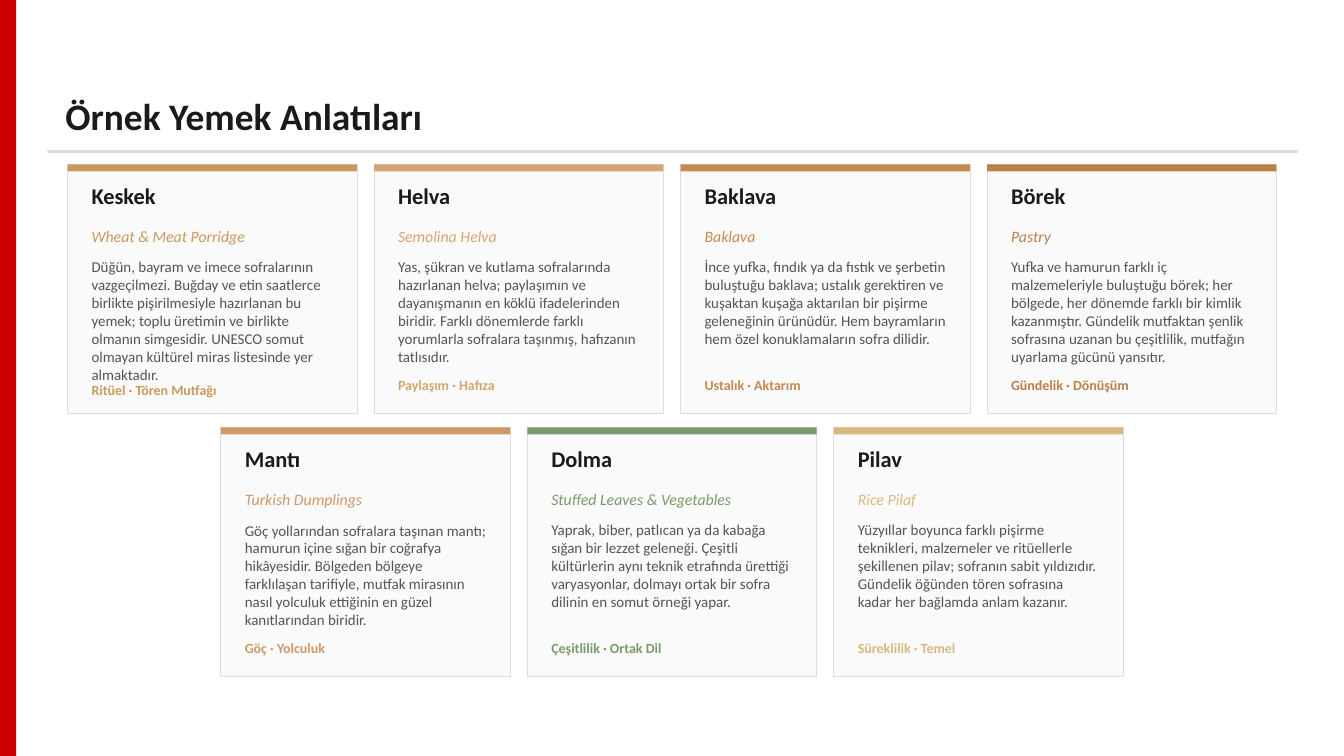
import pptx
import pptx.util
import pptx.dml.color
import pptx.enum.shapes
import pptx.enum.text

Inches = pptx.util.Inches
RGBColor = pptx.dml.color.RGBColor

RED = RGBColor(0xCC, 0x00, 0x00)
INK = RGBColor(0x1A, 0x1A, 0x1A)
GREY = RGBColor(0x55, 0x55, 0x55)
RULE = RGBColor(0xDD, 0xDD, 0xDD)
PAPER = RGBColor(0xFA, 0xFA, 0xFA)
WHEAT = RGBColor(0xC8, 0x9A, 0x60)
SEMOLINA = RGBColor(0xD4, 0xA5, 0x74)
SYRUP = RGBColor(0xC4, 0x8A, 0x50)
CRUST = RGBColor(0xBA, 0x80, 0x48)
DOUGH = RGBColor(0xD0, 0x98, 0x68)
LEAF = RGBColor(0x7A, 0x9A, 0x6A)
RICE = RGBColor(0xD8, 0xB8, 0x80)

WIDTH, HEIGHT = 13.33, 7.5
CARD_WIDTH, CARD_HEIGHT = 2.87, 2.47
COLUMN_STEP, ROW_STEP = 3.04, 2.61
GRID_LEFT, GRID_TOP = 0.67, 1.63
LINE_HEIGHT = 0.18

DISHES = [
    (0, 0, WHEAT, 7, "Keskek", "Wheat & Meat Porridge",
     "Düğün, bayram ve imece sofralarının vazgeçilmezi. Buğday ve etin saatlerce "
     "birlikte pişirilmesiyle hazırlanan bu yemek; toplu üretimin ve birlikte olmanın "
     "simgesidir. UNESCO somut olmayan kültürel miras listesinde yer almaktadır.",
     "Ritüel · Tören Mutfağı"),
    (1, 0, SEMOLINA, 6, "Helva", "Semolina Helva",
     "Yas, şükran ve kutlama sofralarında hazırlanan helva; paylaşımın ve dayanışmanın "
     "en köklü ifadelerinden biridir. Farklı dönemlerde farklı yorumlarla sofralara "
     "taşınmış, hafızanın tatlısıdır.",
     "Paylaşım · Hafıza"),
    (2, 0, SYRUP, 6, "Baklava", "Baklava",
     "İnce yufka, fındık ya da fıstık ve şerbetin buluştuğu baklava; ustalık gerektiren "
     "ve kuşaktan kuşağa aktarılan bir pişirme geleneğinin ürünüdür. Hem bayramların "
     "hem özel konuklamaların sofra dilidir.",
     "Ustalık · Aktarım"),
    (3, 0, CRUST, 6, "Börek", "Pastry",
     "Yufka ve hamurun farklı iç malzemeleriyle buluştuğu börek; her bölgede, her dönemde "
     "farklı bir kimlik kazanmıştır. Gündelik mutfaktan şenlik sofrasına uzanan bu "
     "çeşitlilik, mutfağın uyarlama gücünü yansıtır.",
     "Gündelik · Dönüşüm"),
    (0.5, 1, DOUGH, 6, "Mantı", "Turkish Dumplings",
     "Göç yollarından sofralara taşınan mantı; hamurun içine sığan bir coğrafya "
     "hikâyesidir. Bölgeden bölgeye farklılaşan tarifiyle, mutfak mirasının nasıl "
     "yolculuk ettiğinin en güzel kanıtlarından biridir.",
     "Göç · Yolculuk"),
    (1.5, 1, LEAF, 5, "Dolma", "Stuffed Leaves & Vegetables",
     "Yaprak, biber, patlıcan ya da kabağa sığan bir lezzet geleneği. Çeşitli kültürlerin "
     "aynı teknik etrafında ürettiği varyasyonlar, dolmayı ortak bir sofra dilinin en "
     "somut örneği yapar.",
     "Çeşitlilik · Ortak Dil"),
    (2.5, 1, RICE, 5, "Pilav", "Rice Pilaf",
     "Yüzyıllar boyunca farklı pişirme teknikleri, malzemeler ve ritüellerle şekillenen "
     "pilav; sofranın sabit yıldızıdır. Gündelik öğünden tören sofrasına kadar her "
     "bağlamda anlam kazanır.",
     "Süreklilik · Temel"),
]

deck = pptx.Presentation()
deck.slide_width = Inches(WIDTH)
deck.slide_height = Inches(HEIGHT)
page = deck.slides.add_slide(deck.slide_layouts[6])


def add_bar(left, top, width, height, fill, outline=None):
    bar = page.shapes.add_shape(pptx.enum.shapes.MSO_SHAPE.RECTANGLE,
                                Inches(left), Inches(top), Inches(width), Inches(height))
    bar.shadow.inherit = False
    bar.fill.solid()
    bar.fill.fore_color.rgb = fill
    if outline is None:
        bar.line.fill.background()
    else:
        bar.line.color.rgb = outline
        bar.line.width = pptx.util.Pt(0.5)


def add_text(left, top, width, height, words, size, color, bold=False, italic=False):
    box = page.shapes.add_textbox(Inches(left), Inches(top), Inches(width), Inches(height))
    box.text_frame.word_wrap = True
    box.text_frame.auto_size = pptx.enum.text.MSO_AUTO_SIZE.SHAPE_TO_FIT_TEXT
    para = box.text_frame.paragraphs[0]
    para.text = words
    para.font.name = "Calibri"
    para.font.size = pptx.util.Pt(size)
    para.font.color.rgb = color
    para.font.bold = bold
    para.font.italic = italic


add_bar(0, 0, 0.16, HEIGHT, RED)
add_text(0.55, 0.87, 12.4, 0.55, "Örnek Yemek Anlatıları", 26.7, INK, bold=True)
add_bar(0.47, 1.49, 12.4, 0.03, RULE)

for column, row, accent, lines, name, subtitle, story, theme in DISHES:
    left = GRID_LEFT + column * COLUMN_STEP
    top = GRID_TOP + row * ROW_STEP
    text_left, text_width = left + 0.14, 2.6
    theme_top = top + (2.11 if lines > 6 else 2.06)
    add_bar(left, top, CARD_WIDTH, CARD_HEIGHT, PAPER, RULE)
    add_bar(left, top, CARD_WIDTH, 0.07, accent)
    add_text(text_left, top + 0.13, text_width, 0.37, name, 16, INK, bold=True)
    add_text(text_left, top + 0.57, text_width, 0.29, subtitle, 11.3, accent, italic=True)
    add_text(text_left, top + 0.88, text_width, 0.1 + lines * LINE_HEIGHT, story, 10.7, GREY)
    add_text(text_left, theme_top, text_width, 0.27, theme, 10, accent, bold=True)

deck.save("out.pptx")
